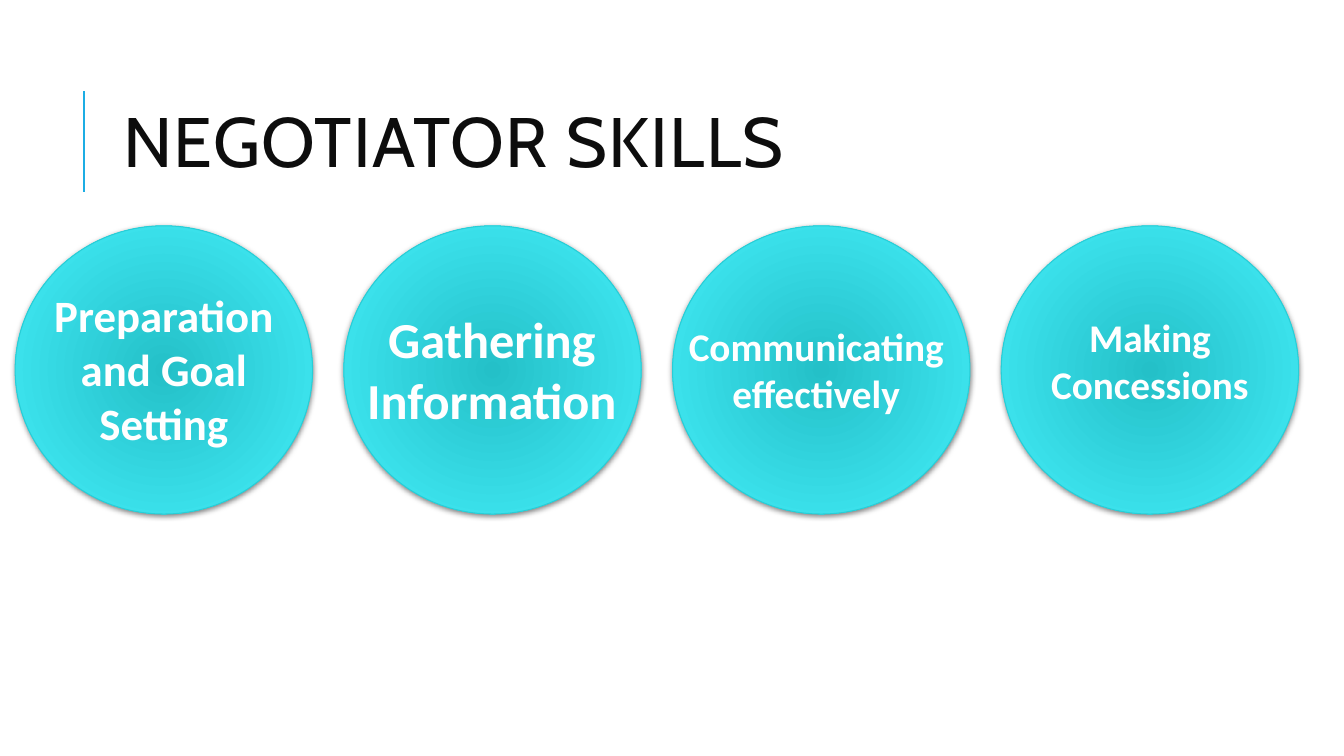
import pptx
import pptx.dml.color
import pptx.enum.shapes
import pptx.enum.text
import pptx.oxml
import pptx.oxml.ns
import pptx.util
from pptx.util import Inches

RGBColor = pptx.dml.color.RGBColor
WHITE = RGBColor(0xFF, 0xFF, 0xFF)
TITLE_INK = RGBColor(0x0D, 0x0D, 0x0D)
ACCENT = RGBColor(0x1C, 0xAD, 0xE4)
RIM = RGBColor(0x27, 0xCE, 0xD7)
CENTRE = RGBColor(0x24, 0xC0, 0xC8)
EDGE = RGBColor(0x44, 0xEE, 0xFA)

CIRCLE_LEFT, CIRCLE_TOP = 0.15, 2.24
CIRCLE_WIDTH, CIRCLE_HEIGHT = 2.95, 2.86
CIRCLE_STEP = 3.26

# Label, size in points, then left, top, width and height in inches
SKILLS = [
    ("Preparation and Goal Setting", 32, (0.3, 2.81, 2.65, 1.72)),
    ("Gathering Information", 36, (3.48, 3.01, 2.8, 1.31)),
    ("Communicating effectively", 28, (6.58, 3.15, 3.03, 1.04)),
    ("Making Concessions", 28, (10.08, 3.06, 2.65, 1.04)),
]


def xml(text):
    ns = pptx.oxml.ns.nsdecls("a")
    return pptx.oxml.parse_xml(text.replace(" ", f" {ns} ", 1))


def style_run(r, font, size, color, bold=False):
    r.font.name = font
    r.font.size = pptx.util.Pt(size)
    r.font.color.rgb = color
    r.font.bold = bold


def set_title(s, text):
    title = s.shapes.title
    title.left, title.top = Inches(1.12), Inches(0.64)
    title.width, title.height = Inches(10.63), Inches(1.64)
    tf = title.text_frame
    tf.text = text
    tf.auto_size = pptx.enum.text.MSO_AUTO_SIZE.NONE
    tf.vertical_anchor = pptx.enum.text.MSO_ANCHOR.MIDDLE
    p = tf.paragraphs[0]
    p.alignment = pptx.enum.text.PP_ALIGN.LEFT
    p.line_spacing = 0.8
    r = p.runs[0]
    style_run(r, "Cabin", 50, TITLE_INK)
    r.font._element.set("spc", "100")


def add_title_rule(s):
    rule = s.shapes.add_connector(
        pptx.enum.shapes.MSO_CONNECTOR.STRAIGHT,
        Inches(0.83), Inches(1.9), Inches(0.83), Inches(0.9))
    rule.line.color.rgb = ACCENT
    rule.line.width = pptx.util.Pt(1.5)
    rule._element.spPr.append(xml("<a:effectLst />"))


def add_circle(shapes, left):
    circle = shapes.add_shape(
        pptx.enum.shapes.MSO_SHAPE.OVAL, Inches(left), Inches(CIRCLE_TOP),
        Inches(CIRCLE_WIDTH), Inches(CIRCLE_HEIGHT))
    circle.line.color.rgb = RIM
    circle.line.width = pptx.util.Pt(0.75)
    circle.fill.gradient()
    for stop, color in zip(circle.fill.gradient_stops, (CENTRE, EDGE)):
        stop.color.rgb = color
    sp_pr = circle._element.spPr
    gradient = sp_pr.find(pptx.oxml.ns.qn("a:gradFill"))
    linear = gradient.find(pptx.oxml.ns.qn("a:lin"))
    gradient.replace(linear, xml(
        '<a:path path="circle"><a:fillToRect l="100000" t="100000" '
        'r="100000" b="100000"/></a:path>'))
    circle.shadow.inherit = False
    sp_pr.find(pptx.oxml.ns.qn("a:effectLst")).append(xml(
        '<a:outerShdw blurRad="50800" dist="12700" dir="5400000" '
        'rotWithShape="0"><a:srgbClr val="000000"><a:alpha val="50000"/>'
        '</a:srgbClr></a:outerShdw>'))


def add_label(shapes, text, size, box):
    tf = shapes.add_textbox(*map(Inches, box)).text_frame
    tf.word_wrap = True
    tf.auto_size = pptx.enum.text.MSO_AUTO_SIZE.SHAPE_TO_FIT_TEXT
    tf.text = text
    p = tf.paragraphs[0]
    p.alignment = pptx.enum.text.PP_ALIGN.CENTER
    p.space_after = pptx.util.Pt(5)
    style_run(p.runs[0], "Calibri", size, WHITE, bold=True)


def main():
    prs = pptx.Presentation()
    prs.slide_width, prs.slide_height = Inches(13.33), Inches(7.5)
    s = prs.slides.add_slide(prs.slide_layouts[5])
    add_title_rule(s)
    set_title(s, "NEGOTIATOR SKILLS")
    for i, (text, size, box) in enumerate(SKILLS):
        group = s.shapes.add_group_shape()
        add_circle(group.shapes, CIRCLE_LEFT + i * CIRCLE_STEP)
        add_label(group.shapes, text, size, box)
    prs.save("out.pptx")


if __name__ == "__main__":
    main()
